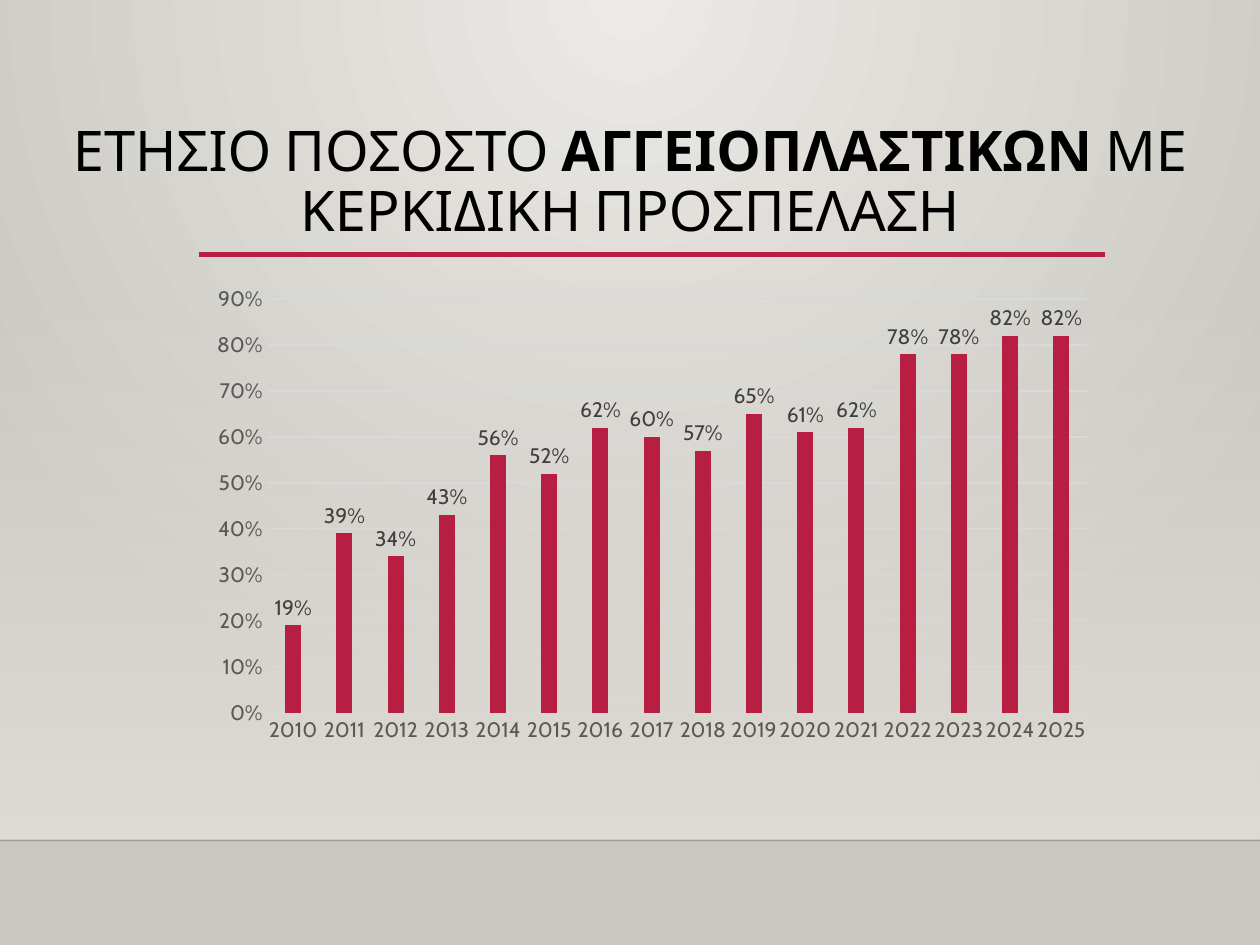
from typing import NamedTuple

from lxml import etree
from pptx import Presentation
from pptx.chart.data import CategoryChartData
from pptx.dml.color import RGBColor
from pptx.enum.chart import XL_CHART_TYPE, XL_LABEL_POSITION, XL_TICK_MARK
from pptx.enum.shapes import MSO_CONNECTOR, MSO_SHAPE
from pptx.enum.text import MSO_ANCHOR, MSO_AUTO_SIZE, PP_ALIGN
from pptx.oxml import parse_xml
from pptx.oxml.ns import qn
from pptx.util import Inches, Pt

COLUMN_CLUSTERED = XL_CHART_TYPE.COLUMN_CLUSTERED
OUTSIDE_END = XL_LABEL_POSITION.OUTSIDE_END
NO_TICK = XL_TICK_MARK.NONE
STRAIGHT = MSO_CONNECTOR.STRAIGHT
RECTANGLE = MSO_SHAPE.RECTANGLE

FONT = "Cabin"
COLORS = {
    "accent": "B71E42",
    "title": "000000",
    "axis": "595959",
    "label": "404040",
    "grid": "D9D9D9",
    "floor": "000001",
    "wall": "DFDBD5",
    "glow": "ECEAE7",
    "edge": "CAC7C1",
}
DRAWING_NS = "http://schemas.openxmlformats.org/drawingml/2006/main"
RADIAL_FROM_TOP = '<a:path path="circle"><a:fillToRect l="43000" r="43000" b="100000"/></a:path>'
DOWNWARD = '<a:lin ang="5400000" scaled="0"/>'

TITLE_RUNS = [
    ("ΕΤΗΣΙΟ ΠΟΣΟΣΤΟ ", False),
    ("ΑΓΓΕΙΟΠΛΑΣΤΙΚΩΝ", True),
    (" ΜΕ ΚΕΡΚΙΔΙΚΗ ΠΡΟΣΠΕΛΑΣΗ", False),
]
FIRST_YEAR = 2010
RADIAL_SHARES = [0.19, 0.39, 0.34, 0.43, 0.56, 0.52, 0.62, 0.60,
                 0.57, 0.65, 0.61, 0.62, 0.78, 0.78, 0.82, 0.82]


class Rule(NamedTuple):
    left: float
    right: float
    top: float
    color: str
    width: float
    opacity: int


RULES = [
    Rule(0, 10, 6.67, "floor", 1, 20),
    Rule(1.58, 8.77, 2.02, "accent", 2.5, 100),
]


class Stop(NamedTuple):
    position: int
    color: str
    opacity: int = 100


def rgb(name: str) -> RGBColor:
    return RGBColor.from_string(COLORS[name])


def set_gradient(owner, stops: list[Stop], direction: str) -> None:
    """Replace the owner's first gradient fill with the given stops and direction."""
    stop_xml = "".join(
        f'<a:gs pos="{stop.position * 1000}"><a:srgbClr val="{COLORS[stop.color]}">'
        f'<a:alpha val="{stop.opacity * 1000}"/></a:srgbClr></a:gs>'
        for stop in stops
    )
    gradient = parse_xml(
        f'<a:gradFill xmlns:a="{DRAWING_NS}" rotWithShape="1">'
        f"<a:gsLst>{stop_xml}</a:gsLst>{direction}</a:gradFill>"
    )
    current = next(owner.element.iter(qn("a:gradFill")))
    current.getparent().replace(current, gradient)


def format_font(font, size: int, color: str) -> None:
    values = {"name": FONT, "size": Pt(size), "bold": False}
    for attribute, value in values.items():
        setattr(font, attribute, value)
    font.color.rgb = rgb(color)


def add_backdrop(slide) -> None:
    slide.background.fill.gradient()
    set_gradient(slide, [Stop(0, "glow"), Stop(100, "edge")], RADIAL_FROM_TOP)
    wall = slide.shapes.add_shape(RECTANGLE, 0, Inches(2.2), Inches(10), Inches(4.46))
    wall.shadow.inherit = False
    wall.line.fill.background()
    wall.fill.gradient()
    set_gradient(wall, [Stop(0, "wall", 0), Stop(100, "wall")], DOWNWARD)


def add_rule(slide, rule: Rule) -> None:
    top = Inches(rule.top)
    line = slide.shapes.add_connector(STRAIGHT, Inches(rule.left), top, Inches(rule.right), top)
    line.line.width = Pt(rule.width)
    line.line.color.rgb = rgb(rule.color)
    if rule.opacity < 100:
        color = next(line.element.iter(qn("a:srgbClr")))
        etree.SubElement(color, qn("a:alpha"), val=str(rule.opacity * 1000))
    etree.SubElement(line.element.spPr, qn("a:effectLst"))


def fill_title(title) -> None:
    box = {"left": 0, "top": Inches(0.88), "width": Inches(10), "height": Inches(1.15)}
    for attribute, value in box.items():
        setattr(title, attribute, value)
    frame = title.text_frame
    frame.word_wrap = True
    frame.auto_size = MSO_AUTO_SIZE.NONE
    frame.vertical_anchor = MSO_ANCHOR.MIDDLE
    paragraph = frame.paragraphs[0]
    paragraph.alignment = PP_ALIGN.CENTER
    paragraph.line_spacing = 0.9
    for text, bold in TITLE_RUNS:
        run = paragraph.add_run()
        run.text = text
        format_font(run.font, 32, "title")
        run.font.bold = bold


def format_axes(chart) -> None:
    for axis in (chart.category_axis, chart.value_axis):
        axis.major_tick_mark = axis.minor_tick_mark = NO_TICK
        format_font(axis.tick_labels.font, 12, "axis")
    shares = chart.value_axis
    for attribute, value in {"minimum_scale": 0, "maximum_scale": 0.9, "major_unit": 0.1}.items():
        setattr(shares, attribute, value)
    shares.tick_labels.number_format = "0%"
    shares.tick_labels.number_format_is_linked = False
    shares.format.line.fill.background()
    for line in (chart.category_axis.format.line, shares.major_gridlines.format.line):
        line.color.rgb = rgb("grid")
        line.width = Pt(0.75)


def add_share_chart(slide) -> None:
    data = CategoryChartData(number_format="0%")
    data.categories = [str(FIRST_YEAR + offset) for offset in range(len(RADIAL_SHARES))]
    data.add_series("Series 1", RADIAL_SHARES)
    chart = slide.shapes.add_chart(
        COLUMN_CLUSTERED, Inches(1.58), Inches(2.2), Inches(7.19), Inches(3.77), data
    ).chart
    chart.has_legend = False
    chart.has_title = False
    format_font(chart.font, 10, "title")
    format_axes(chart)

    plot = chart.plots[0]
    plot.vary_by_categories = False
    plot.gap_width = 219
    plot.overlap = -27
    series = plot.series[0]
    series.format.fill.solid()
    series.format.fill.fore_color.rgb = rgb("accent")
    labels = series.data_labels
    labels.show_value = True
    labels.position = OUTSIDE_END
    format_font(labels.font, 12, "label")


def main() -> None:
    presentation = Presentation()
    presentation.slide_width = Inches(10)
    presentation.slide_height = Inches(7.5)
    slide = presentation.slides.add_slide(presentation.slide_layouts[5])
    add_backdrop(slide)
    for rule in RULES:
        add_rule(slide, rule)
    fill_title(slide.shapes.title)
    add_share_chart(slide)
    presentation.save("out.pptx")


if __name__ == "__main__":
    main()
